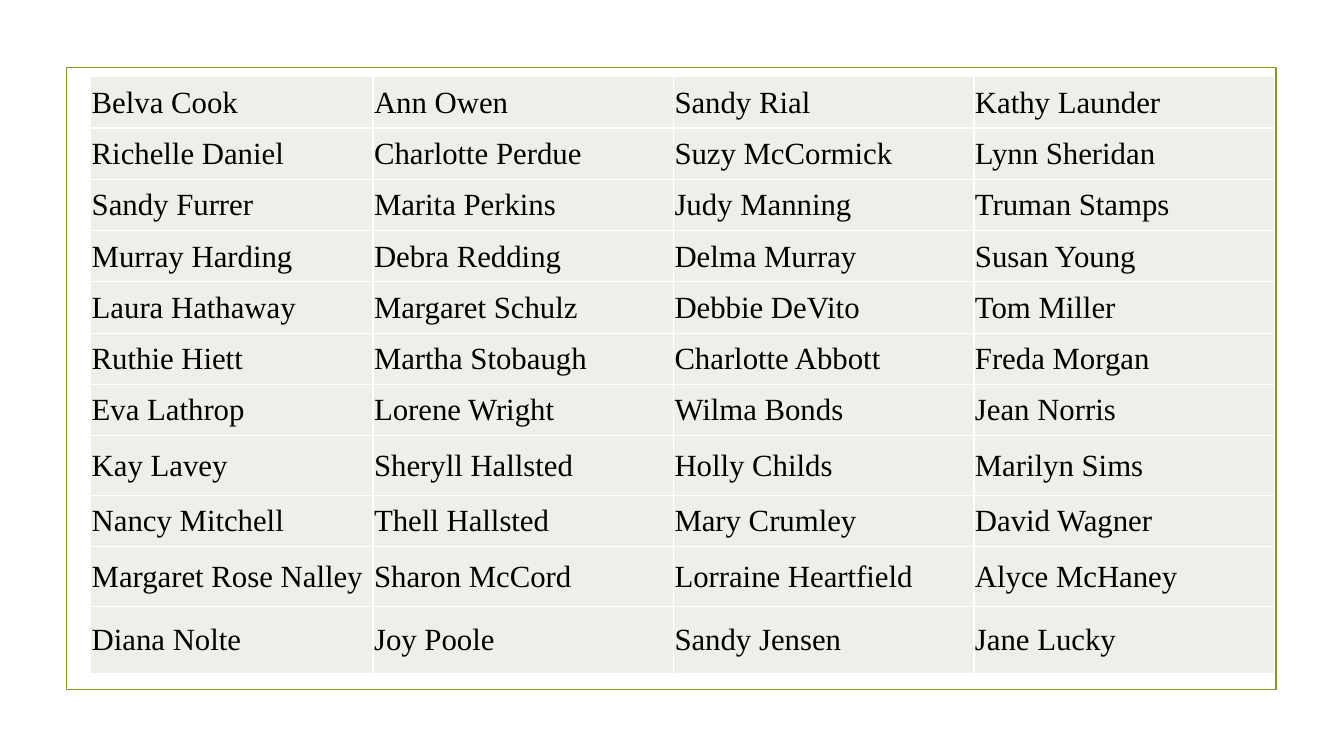
from dataclasses import dataclass

from lxml import etree
from pptx import Presentation
from pptx import util as u
from pptx.dml.color import RGBColor
from pptx.enum import shapes, text
from pptx.oxml import ns


@dataclass(frozen=True)
class Theme:
    """Colours, type and line widths of the slide."""
    frame: str = "83992A"
    cell: str = "EDEFE8"
    rule: str = "FFFFFF"
    ink: str = "000000"
    font: str = "Times New Roman"
    size: float = 22
    frame_width: float = 1.25
    rule_width: float = 1


@dataclass(frozen=True)
class Box:
    """A region in inches."""
    left: float
    top: float
    width: float
    height: float

    def inset(self, left, top, right, bottom):
        """Return the region left after taking off each side."""
        return Box(self.left + left, self.top + top,
                   self.width - left - right, self.height - top - bottom)

    def lengths(self):
        """Return left, top, width and height as slide lengths."""
        return [u.Inches(n) for n in (self.left, self.top, self.width, self.height)]


THEME = Theme()
SLIDE = Box(0, 0, 13.33, 7.5)
COLUMN_SHARES = [2.8, 2.98, 2.98, 2.98]
ROW_SHARES = [0.51] * 7 + [0.59, 0.51, 0.6, 0.66]
MEMBERS = [
    ["Belva Cook", "Ann Owen", "Sandy Rial", "Kathy Launder"],
    ["Richelle Daniel", "Charlotte Perdue", "Suzy McCormick", "Lynn Sheridan"],
    ["Sandy Furrer", "Marita Perkins", "Judy Manning", "Truman Stamps"],
    ["Murray Harding", "Debra Redding", "Delma Murray", "Susan Young"],
    ["Laura Hathaway", "Margaret Schulz", "Debbie DeVito", "Tom Miller"],
    ["Ruthie Hiett", "Martha Stobaugh", "Charlotte Abbott", "Freda Morgan"],
    ["Eva Lathrop", "Lorene Wright", "Wilma Bonds", "Jean Norris"],
    ["Kay Lavey", "Sheryll Hallsted", "Holly Childs", "Marilyn Sims"],
    ["Nancy Mitchell", "Thell Hallsted", "Mary Crumley", "David Wagner"],
    ["Margaret Rose Nalley", "Sharon McCord", "Lorraine Heartfield", "Alyce McHaney"],
    ["Diana Nolte", "Joy Poole", "Sandy Jensen", "Jane Lucky"],
]


def draw_frame(slide, box):
    """Outline the region with a thin green border."""
    frame = slide.shapes.add_shape(shapes.MSO_SHAPE.RECTANGLE, *box.lengths())
    frame.shadow.inherit = False
    frame.fill.background()
    frame.line.color.rgb = RGBColor.from_string(THEME.frame)
    frame.line.width = u.Pt(THEME.frame_width)


def rule_cell(cell):
    """Give a cell a thin rule on all four sides."""
    properties = cell._tc.get_or_add_tcPr()
    for side in ("a:lnL", "a:lnR", "a:lnT", "a:lnB"):
        line = etree.SubElement(properties, ns.qn(side), w=str(u.Pt(THEME.rule_width)))
        fill = etree.SubElement(line, ns.qn("a:solidFill"))
        etree.SubElement(fill, ns.qn("a:srgbClr"), val=THEME.rule)


def write_member(cell, member):
    """Style one cell and write a name in it."""
    rule_cell(cell)
    cell.fill.solid()
    cell.fill.fore_color.rgb = RGBColor.from_string(THEME.cell)
    cell.vertical_anchor = text.MSO_ANCHOR.MIDDLE
    cell.margin_left = cell.margin_top = cell.margin_right = u.Inches(0.01)
    cell.margin_bottom = 0
    run = cell.text_frame.paragraphs[0].add_run()
    run.text = member
    run.font.name = THEME.font
    run.font.size = u.Pt(THEME.size)
    run.font.color.rgb = RGBColor.from_string(THEME.ink)


def draw_roster(slide, box):
    """Fill the region with the table of members."""
    roster = slide.shapes.add_table(
        len(ROW_SHARES), len(COLUMN_SHARES), *box.lengths()).table
    roster.first_row = roster.horz_banding = False
    for column, share in zip(roster.columns, COLUMN_SHARES):
        column.width = u.Inches(box.width * share / sum(COLUMN_SHARES))
    for row, share, members in zip(roster.rows, ROW_SHARES, MEMBERS):
        row.height = u.Inches(box.height * share / sum(ROW_SHARES))
        for cell, member in zip(row.cells, members):
            write_member(cell, member)


def main():
    """Build the slide and save it."""
    deck = Presentation()
    deck.slide_width, deck.slide_height = SLIDE.lengths()[2:]
    slide = deck.slides.add_slide(deck.slide_layouts[6])
    frame = SLIDE.inset(0.66, 0.67, 0.67, 0.66)
    draw_frame(slide, frame)
    draw_roster(slide, frame.inset(0.24, 0.09, 0.02, 0.16))
    deck.save("out.pptx")


if __name__ == "__main__":
    main()
